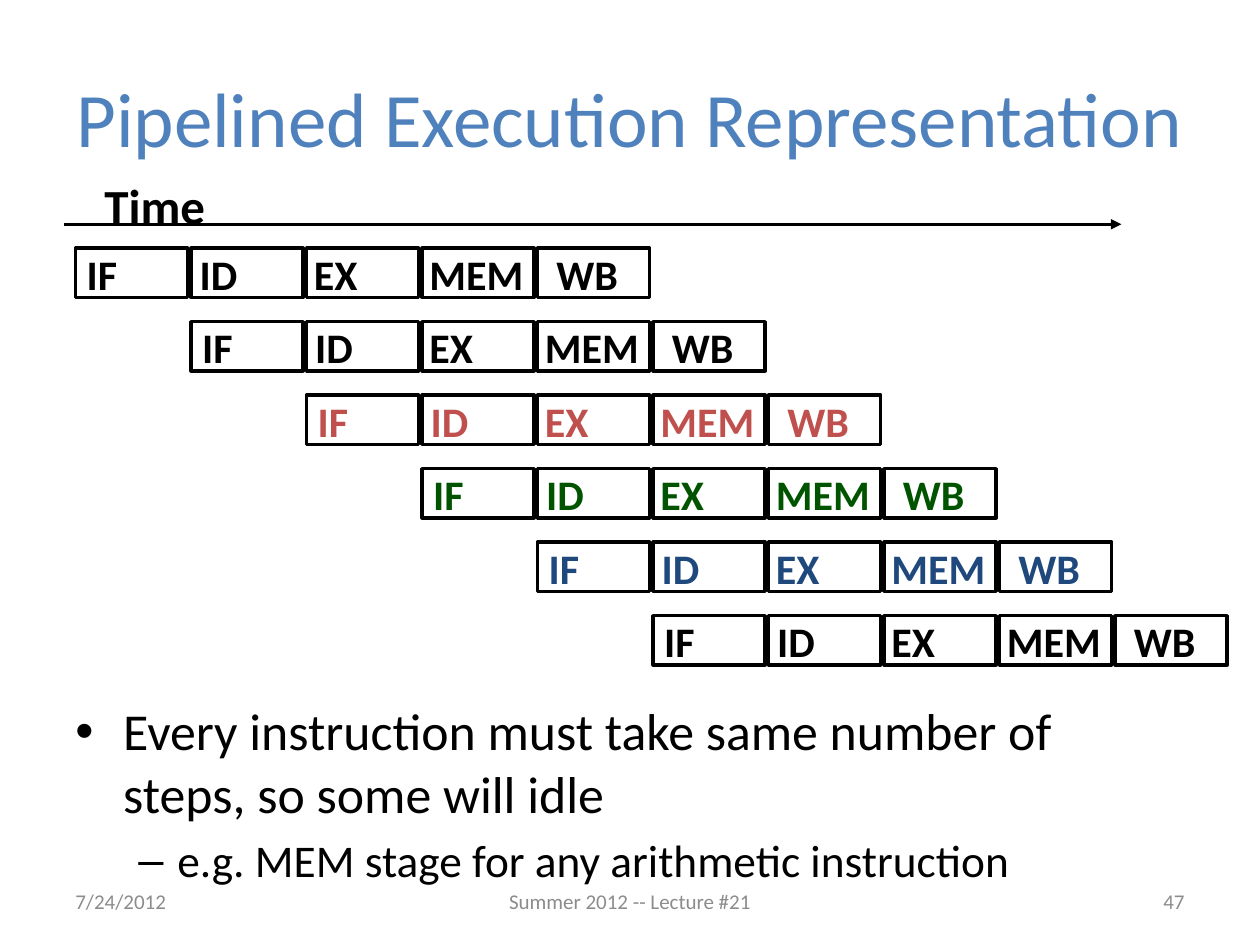
import pptx
import pptx.dml.color
import pptx.enum.shapes
import pptx.enum.text
import pptx.oxml.ns
import pptx.util
from dataclasses import dataclass
from lxml import etree

ALIGN = pptx.enum.text.PP_ALIGN
ANCHOR = pptx.enum.text.MSO_ANCHOR
inch = pptx.util.Inches


@dataclass(frozen=True)
class Theme:
    font: str = "Calibri"
    ink: str = "000000"
    accent: str = "4F81BD"
    red: str = "C0504D"
    green: str = "005400"
    navy: str = "1F497D"
    muted: str = "8C8C8C"
    title: float = 44
    point: float = 29.6
    subpoint: float = 25.9
    axis: float = 28
    stage: float = 24
    footer: float = 12
    line: float = 2


THEME = Theme()
WIDTH, HEIGHT = 10, 7.5
MARGIN = WIDTH / 20

# Pipeline grid: one column per clock cycle, one row per instruction
GRID_LEFT, GRID_TOP = 0.6, 1.97
COLUMN, ROW = 11 / 12, 7 / 12
CELL_WIDTH, CELL_HEIGHT = 0.89, 0.39

# Stage name, shift of its label from the cell, label width
STAGES = [("IF", -0.01, 0.44), ("ID", -0.03, 0.5), ("EX", -0.04, 0.55),
          ("MEM", -0.04, 0.95), ("WB", 0.05, 0.75)]
INSTRUCTION_COLORS = [THEME.ink, THEME.ink, THEME.red,
                      THEME.green, THEME.navy, THEME.ink]


def rgb(color):
    return pptx.dml.color.RGBColor.from_string(color)


def add_ooxml(parent, tag, **attributes):
    return etree.SubElement(parent, pptx.oxml.ns.qn(tag), attributes)


def write(paragraph, text, size, color=THEME.ink, bold=False, align=ALIGN.LEFT):
    paragraph.alignment = align
    run = paragraph.add_run()
    run.text = text
    run.font.name = THEME.font
    run.font.size = pptx.util.Pt(size)
    run.font.bold = bold
    run.font.color.rgb = rgb(color)


def add_frame(shapes, left, top, width, height, anchor=ANCHOR.TOP, wrap=True):
    box = shapes.add_textbox(inch(left), inch(top), inch(width), inch(height))
    box.text_frame.word_wrap = wrap
    box.text_frame.vertical_anchor = anchor
    return box.text_frame


def add_label(shapes, text, place, anchor=ANCHOR.TOP, wrap=True, **text_format):
    frame = add_frame(shapes, *place, anchor=anchor, wrap=wrap)
    write(frame.paragraphs[0], text, **text_format)


def add_bullet(paragraph, mark, text, size, left, hanging, level=0):
    paragraph.level = level
    paragraph.space_before = pptx.util.Pt(round(size * 0.2, 1))
    write(paragraph, text, size)
    properties = paragraph._p.get_or_add_pPr()
    properties.set("marL", str(inch(left)))
    properties.set("indent", str(-inch(hanging)))
    add_ooxml(properties, "a:buFont", typeface="Arial")
    add_ooxml(properties, "a:buChar", char=mark)


def add_cell(shapes, left, top):
    cell = shapes.add_shape(pptx.enum.shapes.MSO_SHAPE.RECTANGLE, inch(left),
                            inch(top), inch(CELL_WIDTH), inch(CELL_HEIGHT))
    cell.shadow.inherit = False
    cell.fill.background()
    cell.line.color.rgb = rgb(THEME.ink)
    cell.line.width = pptx.util.Pt(THEME.line)


def add_instruction(slide, index, color):
    shapes = slide.shapes.add_group_shape().shapes
    top = GRID_TOP + index * ROW
    lefts = [GRID_LEFT + (index + step) * COLUMN for step in range(len(STAGES))]
    for left in lefts:
        add_cell(shapes, left, top)
    for left, (stage, shift, width) in zip(lefts, STAGES):
        add_label(shapes, stage, (left + shift, top - 0.05, width, 0.5),
                  wrap=False, size=THEME.stage, color=color, bold=True)


def add_time_axis(slide):
    shapes = slide.shapes.add_group_shape().shapes
    axis = shapes.add_connector(pptx.enum.shapes.MSO_CONNECTOR.STRAIGHT,
                                inch(0.51), inch(1.78), inch(8.9), inch(1.78))
    axis.line.color.rgb = rgb(THEME.ink)
    axis.line.width = pptx.util.Pt(THEME.line)
    add_ooxml(axis.line._get_or_add_ln(), "a:tailEnd", type="triangle")
    add_ooxml(axis._element.spPr, "a:effectLst")
    add_label(shapes, "Time", (0.73, 1.34, 1.11, 0.56), wrap=False,
              size=THEME.axis, bold=True)


def add_points(slide):
    frame = add_frame(slide.shapes, MARGIN, 5.5, WIDTH - 2 * MARGIN, 1.52)
    add_bullet(frame.paragraphs[0], "•",
               "Every instruction must take same number of steps, so some will idle",
               THEME.point, left=0.38, hanging=0.38)
    add_bullet(frame.add_paragraph(), "–",
               "e.g. MEM stage for any arithmetic instruction",
               THEME.subpoint, left=0.81, hanging=0.31, level=1)


def add_footer(slide):
    side, middle = WIDTH * 0.23, WIDTH * 0.32
    for text, left, width, align in [
            ("7/24/2012", MARGIN, side, ALIGN.LEFT),
            ("Summer 2012 -- Lecture #21", (WIDTH - middle) / 2, middle, ALIGN.CENTER),
            ("47", WIDTH - MARGIN - side, side, ALIGN.RIGHT)]:
        add_label(slide.shapes, text, (left, 6.95, width, 0.4), anchor=ANCHOR.MIDDLE,
                  size=THEME.footer, color=THEME.muted, align=align)


def main():
    deck = pptx.Presentation()
    deck.slide_width, deck.slide_height = inch(WIDTH), inch(HEIGHT)
    slide = deck.slides.add_slide(deck.slide_layouts[6])

    # Title
    add_label(slide.shapes, "Pipelined Execution Representation",
              (MARGIN, 0.3, WIDTH - 2 * MARGIN, 1.25), anchor=ANCHOR.MIDDLE,
              size=THEME.title, color=THEME.accent, align=ALIGN.CENTER)

    # Pipeline diagram
    for index, color in enumerate(INSTRUCTION_COLORS):
        add_instruction(slide, index, color)
    add_time_axis(slide)

    # Bullets and footer
    add_points(slide)
    add_footer(slide)
    deck.save("out.pptx")


if __name__ == "__main__":
    main()
